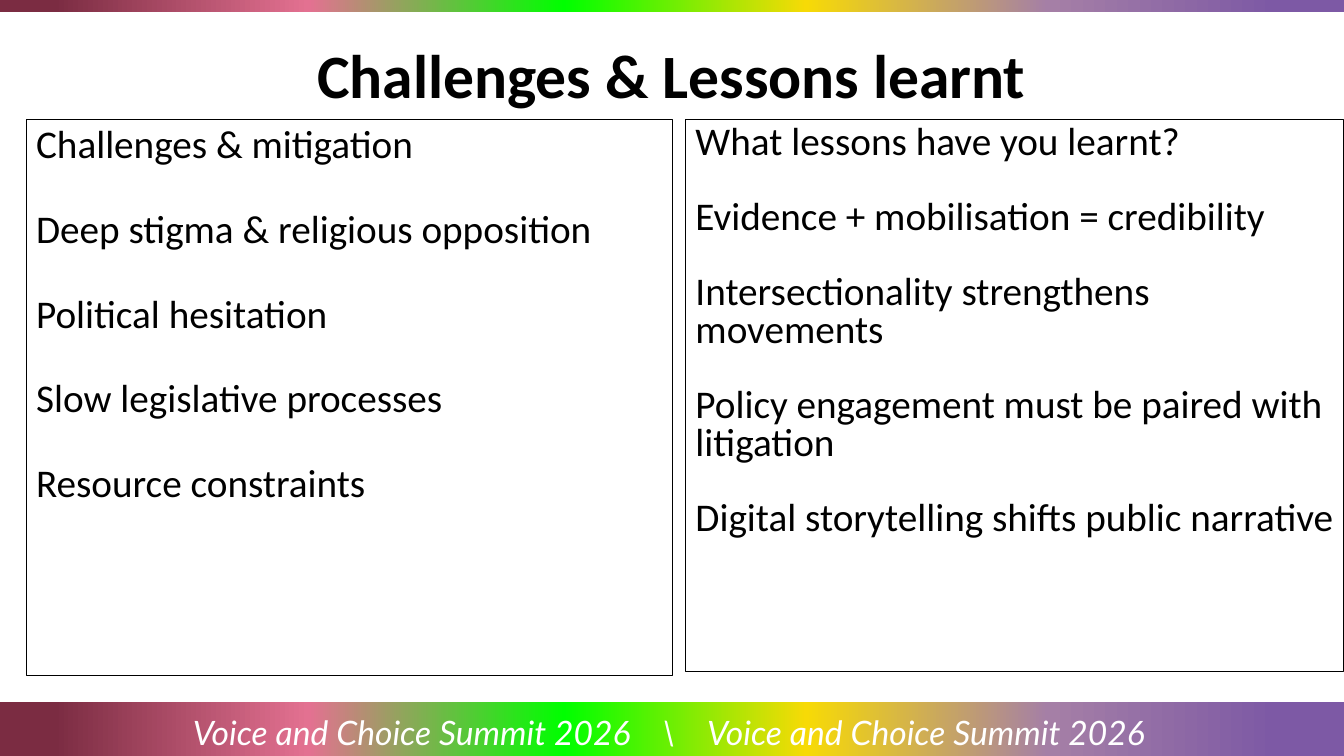
from dataclasses import dataclass

from lxml.etree import SubElement
from pptx import Presentation
from pptx.dml.color import RGBColor
from pptx.enum.shapes import MSO_SHAPE
from pptx.enum.text import MSO_ANCHOR, PP_ALIGN
from pptx.oxml.ns import qn
from pptx.util import Inches, Pt

W, H = 13.33, 7.5


@dataclass(frozen=True)
class Theme:
    ink: str = "000000"
    paper: str = "FFFFFF"
    rainbow: tuple = ((0, "7D59A5"), (5, "7D59A5"), (22, "A57FA6"), (40, "F7DA06"),
                      (58, "00FF00"), (77, "E37191"), (96, "7B2C42"), (100, "7B2C42"))
    body_font: str = "Calibri"
    footer_font: str = "Lato"
    title_size: int = 44
    body_size: int = 28
    footer_size: int = 24
    border: float = 0.75


T = Theme()

CHALLENGES = ["Challenges & mitigation", "Deep stigma & religious opposition",
              "Political hesitation", "Slow legislative processes", "Resource constraints"]
LESSONS = ["What lessons have you learnt?", "Evidence + mobilisation = credibility",
           "Intersectionality strengthens movements",
           "Policy engagement must be paired with litigation",
           "Digital storytelling shifts public narrative"]
EVENT = "Voice and Choice Summit 2026"


def add_text(sp, lines, *, size, font=T.body_font, color=T.ink, bold=False, italic=False,
             align=PP_ALIGN.LEFT, anchor=MSO_ANCHOR.TOP, spacing=1.0, gap=0, tabs=()):
    """Fill a shape with one paragraph per line; tabs are centred stops in inches."""
    tf = sp.text_frame
    tf.word_wrap = True
    tf.vertical_anchor = anchor
    for i, line in enumerate(lines):
        p = tf.paragraphs[0] if i == 0 else tf.add_paragraph()
        p.alignment = align
        p.line_spacing = spacing
        p.space_before = Pt(gap if i else 0)
        if tabs:
            tab_list = SubElement(p._p.get_or_add_pPr(), qn("a:tabLst"))
            for pos in tabs:
                SubElement(tab_list, qn("a:tab"), pos=str(Inches(pos)), algn="ctr")
        r = p.add_run()
        r.text = line
        f = r.font
        f.name, f.size, f.bold, f.italic = font, Pt(size), bold, italic
        f.color.rgb = RGBColor.from_string(color)


def add_rect(s, box):
    sp = s.shapes.add_shape(MSO_SHAPE.RECTANGLE, *map(Inches, box))
    sp.shadow.inherit = False
    return sp


def add_rainbow(s, box):
    sp = add_rect(s, box)
    sp.line.fill.background()
    sp.fill.gradient()
    sp.fill.gradient_angle = 180
    stops = sp._element.spPr.find(qn("a:gradFill")).find(qn("a:gsLst"))
    stops.clear()
    for share, color in T.rainbow:
        stop = SubElement(stops, qn("a:gs"), pos=str(share * 1000))
        SubElement(stop, qn("a:srgbClr"), val=color)


def add_title(s, box, text):
    tb = s.shapes.add_textbox(*map(Inches, box))
    add_text(tb, [text], size=T.title_size, bold=True, align=PP_ALIGN.CENTER,
             anchor=MSO_ANCHOR.MIDDLE)


def add_panel(s, box, lines, spacing):
    """Bordered list whose items stand one text line apart."""
    sp = add_rect(s, box)
    sp.fill.background()
    sp.line.color.rgb = RGBColor.from_string(T.ink)
    sp.line.width = Pt(T.border)
    line_height = 1.2 * T.body_size * spacing
    add_text(sp, lines, size=T.body_size, spacing=spacing, gap=line_height)


def add_footer(s, box):
    add_rainbow(s, box)
    x, y, w, h = box
    tb = s.shapes.add_textbox(*map(Inches, (x, y + 0.03, w, h - 0.08)))
    middle = w / 2 - 0.13
    add_text(tb, [f"\t{EVENT}\t\\\t{EVENT}"], size=T.footer_size, font=T.footer_font,
             color=T.paper, italic=True, spacing=1.07,
             tabs=(middle - 2.55, middle, middle + 2.55))


def main():
    prs = Presentation()
    prs.slide_width, prs.slide_height = Inches(W), Inches(H)
    s = prs.slides.add_slide(prs.slide_layouts[6])
    top = 1.19
    add_rainbow(s, (0, 0, W, 0.12))
    add_title(s, (0, 0.27, W, top - 0.27), "Challenges & Lessons learnt")
    add_panel(s, (0.26, top, 6.41, 5.51), CHALLENGES, 0.9)
    add_panel(s, (6.8, top, W - 6.8, 5.47), LESSONS, 0.8)
    add_footer(s, (0, 6.96, W, 0.57))
    prs.save("out.pptx")


if __name__ == "__main__":
    main()
